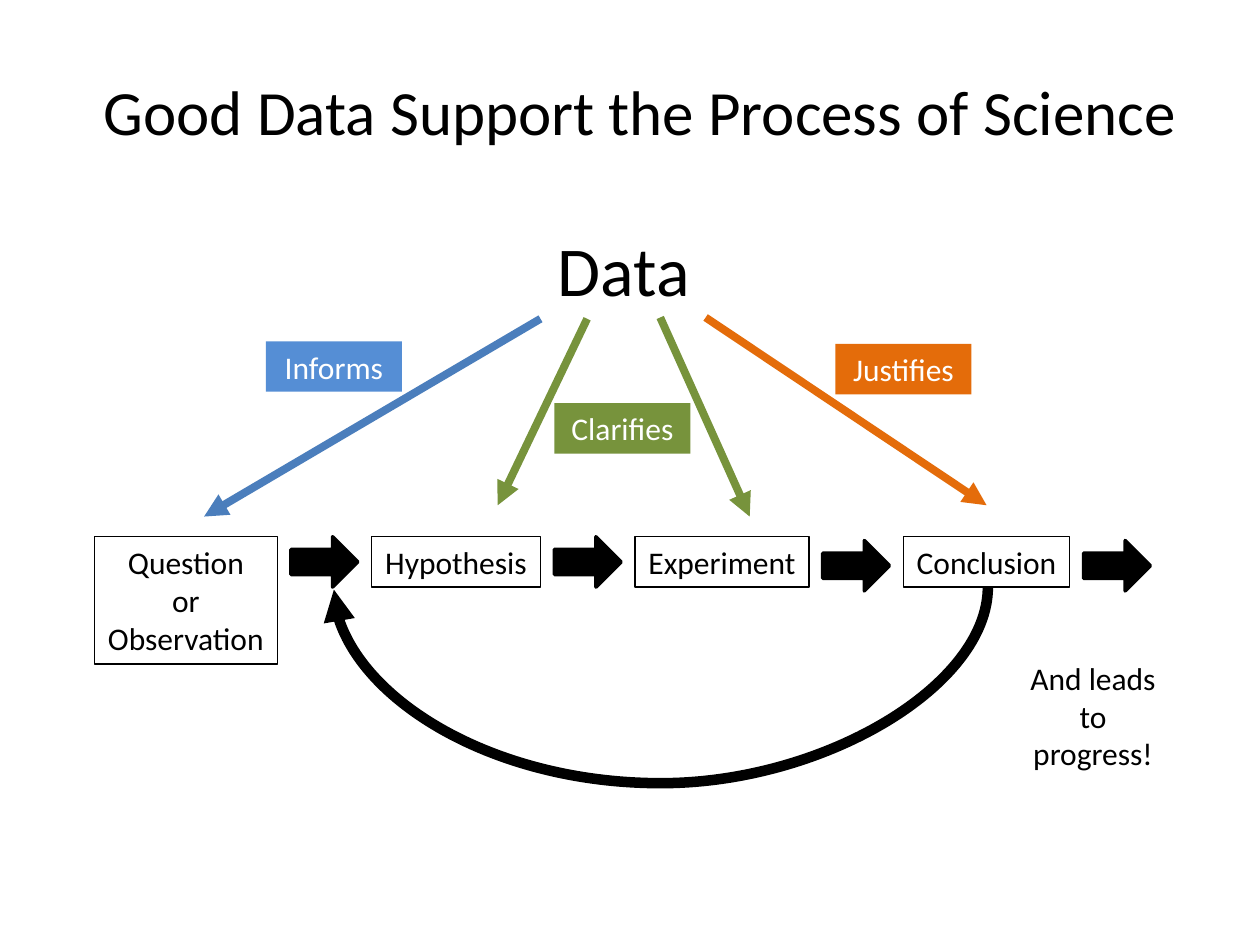
from lxml import etree
from pptx import Presentation
from pptx import util as u
from pptx.dml.color import RGBColor
from pptx.enum import shapes, text
from pptx.oxml.ns import qn

TITLE = "Good Data Support the Process of Science"
BLACK, WHITE, GREEN, ORANGE = "000000", "FFFFFF", "77933C", "E46C0A"
STEPS = [
    ("Question\nor\nObservation", 0.75, 1.45, 1.01, 4.26),
    ("Hypothesis", 2.95, 1.34, 0.4, 4.26),
    ("Experiment", 5.04, 1.38, 0.4, 4.29),
    ("Conclusion", 7.17, 1.32, 0.4, 4.29),
]
STEP_TOP, ARROW_GAP, ARROW_SIZE = 4.26, 0.11, (0.53, 0.4)
RAYS = [
    ((4.29, 2.53), (1.62, 4.1), "4B7EBC"),
    ((4.66, 2.53), (3.95, 4.01), GREEN),
    ((5.24, 2.52), (5.95, 4.1), GREEN),
    ((5.6, 2.52), (7.83, 4.01), ORANGE),
]
ROLES = [
    ("Informs", 2.11, 2.71, "558ED5"),
    ("Clarifies", 4.4, 3.2, GREEN),
    ("Justifies", 6.63, 2.73, ORANGE),
]
ROLE_SIZE = (1.08, 0.4)
LOOP_START, LOOP_END, LOOP_DEPTH = (7.84, 4.66), (2.65, 4.68), 1.55


def rgb(color):
    return RGBColor.from_string(color)


def style(paragraph, size, color):
    paragraph.alignment = text.PP_ALIGN.CENTER
    paragraph.font.name = "Calibri"
    paragraph.font.size = u.Pt(size)
    paragraph.font.color.rgb = rgb(color)


def add_label(slide, words, box, size=18, color=BLACK, fill=None, outline=None, wrap=True):
    label = slide.shapes.add_textbox(*map(u.Inches, box))
    frame = label.text_frame
    frame.word_wrap = wrap
    frame.auto_size = text.MSO_AUTO_SIZE.SHAPE_TO_FIT_TEXT
    frame.paragraphs[0].text = words
    style(frame.paragraphs[0], size, color)
    if fill:
        label.fill.solid()
        label.fill.fore_color.rgb = rgb(fill)
    if outline:
        label.line.color.rgb = rgb(outline)
        label.line.width = u.Pt(0.75)


def add_block_arrow(slide, left, top):
    arrow = slide.shapes.add_shape(
        shapes.MSO_SHAPE.RIGHT_ARROW, *map(u.Inches, (left, top, *ARROW_SIZE)))
    arrow.shadow.inherit = False
    arrow.fill.solid()
    arrow.fill.fore_color.rgb = rgb(BLACK)
    arrow.line.color.rgb = rgb(BLACK)
    arrow.line.width = u.Pt(2)


def add_arrow(slide, kind, start, end, color, width):
    arrow = slide.shapes.add_connector(kind, *map(u.Inches, (*start, *end)))
    arrow.line.color.rgb = rgb(color)
    arrow.line.width = u.Pt(width)
    properties = arrow._element.spPr
    etree.SubElement(properties.find(qn("a:ln")), qn("a:tailEnd"), type="triangle")
    etree.SubElement(properties, qn("a:effectLst"))
    return arrow


def add_loop(slide):
    """Draw the feedback curve as a connector turned a quarter clockwise."""
    (x1, y1), (x2, y2) = LOOP_START, LOOP_END
    across, along = y2 - y1, x1 - x2
    left, top = (x1 + x2 - across) / 2, (y1 + y2 - along) / 2
    loop = add_arrow(slide, shapes.MSO_CONNECTOR.CURVE, (left, top),
                     (left + across, top + along), BLACK, 6)
    properties = loop._element.spPr
    properties.find(qn("a:xfrm")).set("rot", str(90 * 60000))
    guides = properties.find(qn("a:prstGeom")).find(qn("a:avLst"))
    bend = round(LOOP_DEPTH / across * 100000)
    etree.SubElement(guides, qn("a:gd"), name="adj1", fmla=f"val {bend}")


def main():
    deck = Presentation()
    deck.slide_width, deck.slide_height = u.Inches(10), u.Inches(7.5)
    slide = deck.slides.add_slide(deck.slide_layouts[5])

    title = slide.shapes.title
    title.left, title.top, title.width, title.height = map(u.Inches, (0.5, 0.25, 9.16, 1.25))
    title.text_frame.text = TITLE
    title.text_frame.vertical_anchor = text.MSO_ANCHOR.MIDDLE
    style(title.text_frame.paragraphs[0], 36, BLACK)

    for words, left, width, height, arrow_top in STEPS:
        add_label(slide, words, (left, STEP_TOP, width, height), outline=BLACK, wrap=False)
        add_block_arrow(slide, left + width + ARROW_GAP, arrow_top)
    add_loop(slide)

    add_label(slide, "Data", (4.32, 1.75, 1.26, 0.77), size=40, wrap=False)
    for start, end, color in RAYS:
        add_arrow(slide, shapes.MSO_CONNECTOR.STRAIGHT, start, end, color, 4.5)
    for words, left, top, fill in ROLES:
        add_label(slide, words, (left, top, *ROLE_SIZE), color=WHITE, fill=fill)
    add_label(slide, "And leads to progress!", (8.07, 5.18, 1.21, 1.01))

    deck.save("out.pptx")


if __name__ == "__main__":
    main()
